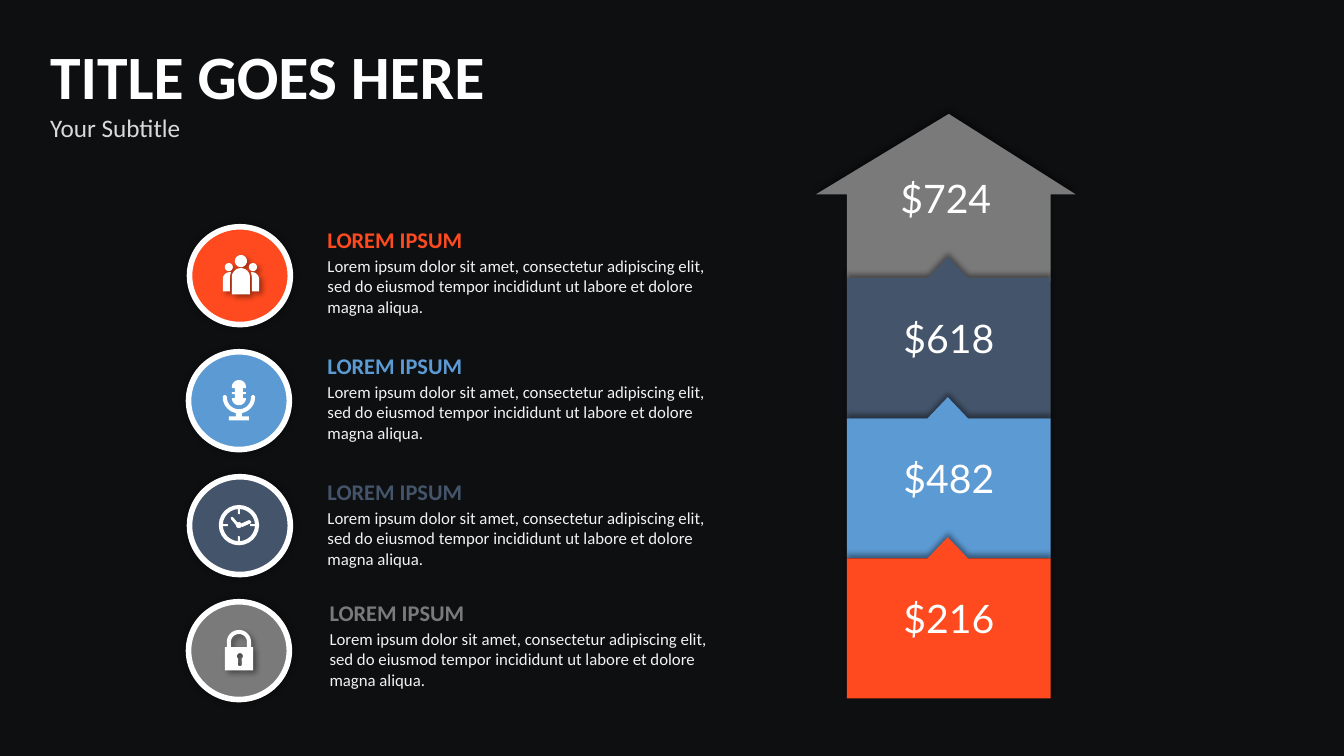
from dataclasses import dataclass
from math import cos, radians, sin

from lxml import etree
from pptx import Presentation, util as u
from pptx.dml.color import RGBColor
from pptx.enum import shapes as kinds, text
from pptx.oxml.ns import qn


@dataclass(frozen=True)
class Theme:
    background: str = "0E0F11"
    white: str = "FFFFFF"
    subtitle: str = "D9D9D9"
    body: str = "F2F2F2"
    orange: str = "FE4A1E"
    blue: str = "5C9AD3"
    navy: str = "44546B"
    gray: str = "7A7A7A"
    font: str = "Calibri"
    price_font: str = "Lato"
    title_size: int = 44
    subtitle_size: int = 18
    heading_size: int = 16
    body_size: int = 12
    price_size: int = 28


THEME = Theme()
PRESET = kinds.MSO_SHAPE
LOREM = ("Lorem ipsum dolor sit amet, consectetur adipiscing elit, sed do eiusmod "
         "tempor incididunt ut labore et dolore magna aliqua.")


# Shared helpers
def paint(shape, color, shadow=None):
    """Fill a shape; shadow is (blur pt, distance pt, direction in degrees)."""
    shape.fill.solid()
    shape.fill.fore_color.rgb = RGBColor.from_string(color)
    shape.line.fill.background()
    shape.shadow.inherit = False
    if shadow:
        blur, distance, direction = shadow
        effects = shape._element.spPr.find(qn("a:effectLst"))
        outer = etree.SubElement(
            effects, qn("a:outerShdw"), blurRad=str(u.Pt(blur)), dist=str(u.Pt(distance)),
            dir=str(direction * 60000), algn="ctr", rotWithShape="0")
        black = etree.SubElement(outer, qn("a:srgbClr"), val="000000")
        etree.SubElement(black, qn("a:alpha"), val="40000")
    return shape


def add_preset(parent, preset, left, top, width, height, color, shadow=None):
    box = [u.Inches(v) for v in (left, top, width, height)]
    return paint(parent.add_shape(preset, *box), color, shadow)


def add_outline(parent, origin, contours, color, shadow=None):
    """Draw closed contours, given in inches from the origin, as one shape."""
    builder = None
    for contour in contours:
        points = [(u.Inches(origin[0] + x), u.Inches(origin[1] + y)) for x, y in contour]
        if builder is None:
            builder = parent.build_freeform(*points[0])
        else:
            builder.move_to(*points[0])
        builder.add_line_segments(points[1:], close=True)
    return paint(builder.convert_to_shape(), color, shadow)


def arc(x, y, radius, start, end, steps=24):
    angles = [radians(start + (end - start) * i / steps) for i in range(steps + 1)]
    return [(x + radius * cos(a), y + radius * sin(a)) for a in angles]


def circle(x, y, radius):
    return arc(x, y, radius, 0, 345, 23)


def style(paragraph, size, color, bold=False, font=THEME.font):
    for run in paragraph.runs:
        run.font.name, run.font.size, run.font.bold = font, u.Pt(size), bold
        run.font.color.rgb = RGBColor.from_string(color)


def add_text_pair(parent, box, first, second, gap=0):
    """A bold line over a plain one; each is (wording, size, color)."""
    frame = parent.add_textbox(*[u.Inches(v) for v in box]).text_frame
    frame.word_wrap = True
    frame.auto_size = text.MSO_AUTO_SIZE.SHAPE_TO_FIT_TEXT
    frame.text = first[0]
    style(frame.paragraphs[0], *first[1:], bold=True)
    lower = frame.add_paragraph()
    lower.text = second[0]
    lower.space_before = u.Pt(gap)
    style(lower, *second[1:])


# Icons, each centred on its origin
def people_icon(parent, origin):
    contours = [circle(0, -0.14, 0.06),
                arc(0, 0.02, 0.09, 180, 360) + [(0.09, 0.19), (-0.09, 0.19)]]
    companion = arc(-0.11, 0.04, 0.07, 180, 270) + [
        (-0.1, -0.03), (-0.11, 0.02), (-0.11, 0.16), (-0.18, 0.16)]
    for side in (1, -1):
        contours.append(circle(-0.12 * side, -0.08, 0.04))
        contours.append([(x * side, y) for x, y in companion])
    add_outline(parent, origin, contours, THEME.white, (4, 3, 45))


def microphone_icon(parent, origin):
    group = parent.add_group_shape().shapes
    cradle = (arc(0.14, -0.03, 0.02, 180, 360) + arc(0, -0.03, 0.16, 0, 180)
              + arc(-0.14, -0.03, 0.02, 180, 360) + arc(0, -0.03, 0.12, 180, 0))
    notches = [(0.07, -0.12), (0.04, -0.12), (0.04, -0.08), (0.07, -0.08),
               (0.07, -0.06), (0.04, -0.06), (0.04, -0.02), (0.07, -0.02)]
    capsule = (arc(0, -0.13, 0.07, 180, 360) + notches + arc(0, -0.02, 0.07, 0, 180)
               + [(-x, y) for x, y in reversed(notches)])
    for part in (cradle, capsule):
        add_outline(group, origin, [part], THEME.white)
    for left, top, width, height in ((-0.03, 0.12, 0.06, 0.05), (-0.1, 0.16, 0.2, 0.04)):
        add_preset(group, PRESET.RECTANGLE, origin[0] + left, origin[1] + top,
                   width, height, THEME.white)


def clock_icon(parent, origin):
    group = parent.add_group_shape().shapes
    x, y = origin
    hour = [(0, -0.01), (-0.02, 0.01), (-0.08, -0.06), (-0.08, -0.08), (-0.06, -0.08)]
    minute = [(0.03, 0.02), (0.01, -0.01), (0.1, -0.05), (0.12, -0.04), (0.12, -0.02)]
    for contours in ([hour], [minute], [circle(0, 0, 0.2), circle(0, 0, 0.16)]):
        add_outline(group, origin, contours, THEME.white)
    add_preset(group, PRESET.OVAL, x - 0.03, y - 0.03, 0.06, 0.06, THEME.white)
    for across, down in ((0, 1), (0, -1), (1, 0), (-1, 0)):
        width, height = (0.08, 0.02) if across else (0.02, 0.08)
        add_preset(group, PRESET.ROUNDED_RECTANGLE, x + 0.15 * across - width / 2,
                   y + 0.15 * down - height / 2, width, height, THEME.white)


def lock_icon(parent, origin):
    body = ([(-0.14, -0.03), (-0.12, -0.03)] + arc(0, -0.08, 0.12, 180, 360)
            + [(0.12, -0.03), (0.14, -0.03), (0.14, 0.2), (-0.14, 0.2)])
    shackle_gap = arc(0, -0.08, 0.08, 180, 360) + [(0.08, -0.03), (-0.08, -0.03)]
    keyhole = arc(0.01, 0.06, 0.03, 125, 415) + arc(0.01, 0.14, 0.02, 0, 180)
    add_outline(parent, origin, [body, shackle_gap, keyhole], THEME.white, (4, 3, 45))


# Regions
def add_title(parent, box):
    add_text_pair(parent, box, ("TITLE GOES HERE", THEME.title_size, THEME.white),
                  ("Your Subtitle", THEME.subtitle_size, THEME.subtitle))


def add_feature(parent, left, badge_top, text_left, text_top, icon_shift, color, icon):
    badge = add_preset(parent, PRESET.OVAL, left, badge_top, 1, 0.97, color, (5, 0, 0))
    badge.line.color.rgb = RGBColor.from_string(THEME.white)
    badge.line.width = u.Pt(4)
    icon(parent, (left + 0.5 + icon_shift, badge_top + 0.48))
    add_text_pair(parent, (text_left, text_top, 4, 1.02),
                  ("LOREM IPSUM", THEME.heading_size, color),
                  (LOREM, THEME.body_size, THEME.body), gap=2.4)


def add_price_arrow(parent, left, top, prices):
    """Stack the arrow head and the notched blocks, from the top down."""
    width, step, peak = 2.02, 1.39, 0.21
    head = [(2.27, 0.8), (1.01, 0), (-0.31, 0.8), (0, 0.8),
            (0, 1.66), (width, 1.66), (width, 0.8)]
    block = [(1.2, 0), (1, -peak), (0.8, 0), (0, 0), (0, step), (width, step), (width, 0)]
    for index, (price, color) in enumerate(prices):
        origin = (left, top + 0.24 + step * index) if index else (left, top)
        segment = add_outline(parent, origin, [block if index else head], color, (4, 3, 270))
        frame = segment.text_frame
        frame.text = price
        frame.word_wrap = False
        frame.vertical_anchor = text.MSO_ANCHOR.MIDDLE
        frame.paragraphs[0].alignment = text.PP_ALIGN.CENTER
        style(frame.paragraphs[0], THEME.price_size, THEME.white, font=THEME.price_font)


def main():
    deck = Presentation()
    deck.slide_width, deck.slide_height = u.Inches(13.33), u.Inches(7.5)
    slide = deck.slides.add_slide(deck.slide_layouts[6])
    slide.background.fill.solid()
    slide.background.fill.fore_color.rgb = RGBColor.from_string(THEME.background)

    add_price_arrow(slide.shapes, 8.4, 1.13, [
        ("$724", THEME.gray), ("$618", THEME.navy), ("$482", THEME.blue), ("$216", THEME.orange)])
    features = [
        (1.88, 3.15, 2.19, 0.01, THEME.orange, people_icon),
        (1.87, 3.15, 3.44, 0, THEME.blue, microphone_icon),
        (1.88, 3.15, 4.69, -0.01, THEME.navy, clock_icon),
        (1.87, 3.17, 5.89, 0, THEME.gray, lock_icon)]
    for index, (left, *rest) in enumerate(features):
        add_feature(slide.shapes, left, 2.25 + 1.24 * index, *rest)
    add_title(slide.shapes, (0.4, 0.33, 6.5, 1.14))
    deck.save("out.pptx")


if __name__ == "__main__":
    main()
